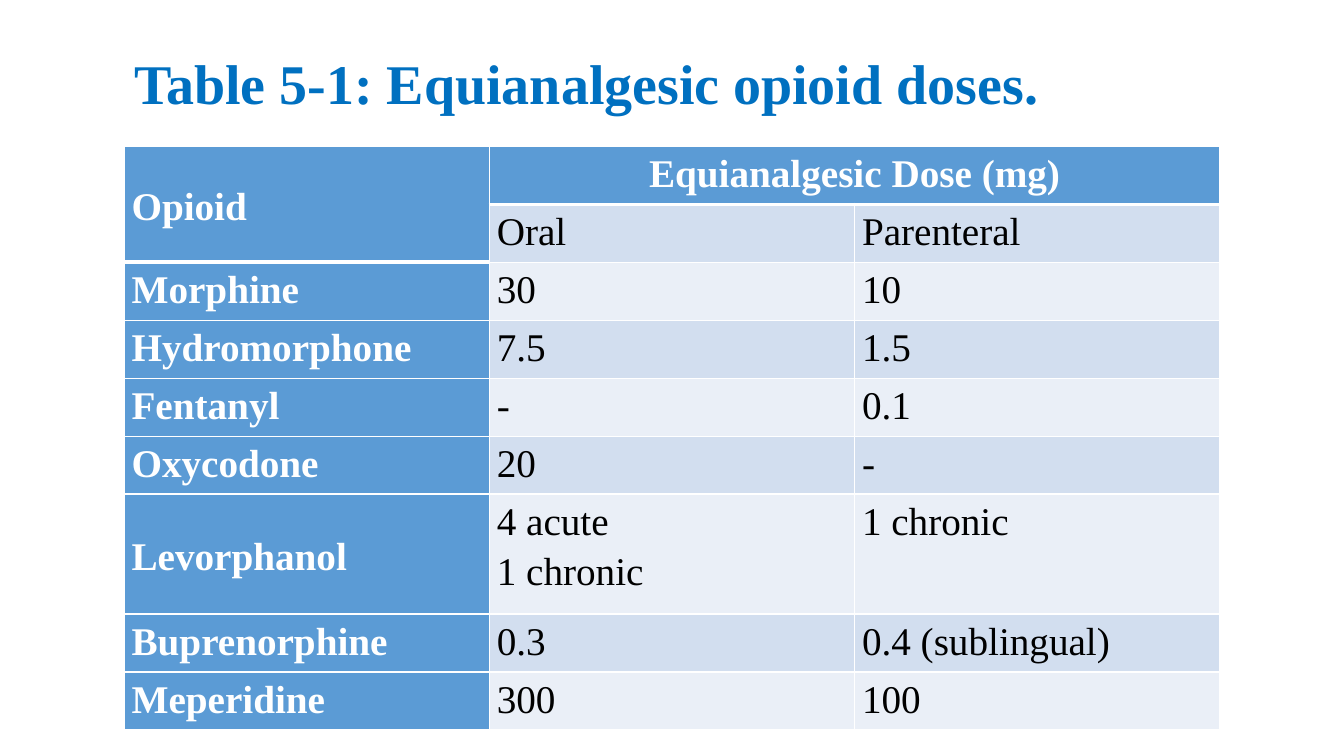
from pptx import Presentation
from pptx.dml.color import RGBColor
from pptx.enum.text import MSO_ANCHOR as Anchor, PP_ALIGN as Align
from pptx.oxml import parse_xml
from pptx.oxml.ns import nsdecls
from pptx.util import Pt

FONT = "Times New Roman"
WHITE, BLACK, TITLE_BLUE = "FFFFFF", "000000", "0070C0"
HEADER_FILL, BANDS = "5B9BD5", ("EAEFF7", "D2DEEF")
ROW_H, TALL_ROW_H, COL_W = 41.4, 85.7, 260.9
TALL_ROW = 6
DOSES = [
    ("Opioid", "Equianalgesic Dose (mg)", ""),
    ("", "Oral", "Parenteral"),
    ("Morphine", "30", "10"),
    ("Hydromorphone", "7.5", "1.5"),
    ("Fentanyl", "-", "0.1"),
    ("Oxycodone", "20", "-"),
    ("Levorphanol", "4 acute\n1 chronic", "1 chronic"),
    ("Buprenorphine", "0.3", "0.4 (sublingual)"),
    ("Meperidine", "300", "100"),
]


def rgb(color):
    return RGBColor.from_string(color)


def format_text(tf, size, color, bold, align):
    for p in tf.paragraphs:
        p.alignment = align
        p.line_spacing = 1.15
        p.space_before = Pt(0)
        p.font.name = FONT
        p.font.size = Pt(size)
        p.font.bold = bold
        p.font.color.rgb = rgb(color)


def add_title(s, text):
    title = s.shapes.title
    title.left, title.top, title.width, title.height = map(Pt, (88.6, 15.1, 805.7, 80.6))
    tf = title.text_frame
    tf.text = text
    tf.word_wrap = True
    tf.vertical_anchor = Anchor.MIDDLE
    format_text(tf, 40, TITLE_BLUE, True, Align.LEFT)


def set_borders(cell, **widths):
    """Draw white cell edges; call before the fill, which must follow them."""
    tc_pr = cell._tc.get_or_add_tcPr()
    for side in "LRTB":
        tc_pr.append(parse_xml(
            f'<a:ln{side} {nsdecls("a")} w="{Pt(widths.get(side, 1))}"><a:solidFill>'
            f'<a:srgbClr val="{WHITE}"/></a:solidFill></a:ln{side}>'))


def format_cell(cell, row, col, text):
    is_header = row == 0 or col == 0
    header_end = 2 if col == 0 else 1
    last_row = 1 if cell.is_merge_origin and col == 0 else row
    set_borders(cell, T=3 if row == header_end else 1,
                B=3 if last_row + 1 == header_end else 1)
    cell.fill.solid()
    cell.fill.fore_color.rgb = rgb(HEADER_FILL if is_header else BANDS[row % 2])
    cell.margin_left = cell.margin_right = Pt(5.4)
    cell.margin_top = cell.margin_bottom = 0
    centred = col == 0 and row in (0, TALL_ROW)
    cell.vertical_anchor = Anchor.MIDDLE if centred else Anchor.TOP
    if cell.is_spanned:
        return
    cell.text_frame.text = text
    if row == 0 and col == 1:
        align = Align.CENTER
    else:
        align = Align.LEFT if row == 1 else Align.JUSTIFY
    format_text(cell.text_frame, 28, WHITE if is_header else BLACK, is_header, align)


def add_dose_table(s):
    heights = [TALL_ROW_H if i == TALL_ROW else ROW_H for i in range(len(DOSES))]
    frame = s.shapes.add_table(len(DOSES), 3, Pt(88.6), Pt(104.6),
                               Pt(3 * COL_W), Pt(sum(heights)))
    table = frame.table
    table.first_col = True
    for column in table.columns:
        column.width = Pt(COL_W)
    for table_row, height in zip(table.rows, heights):
        table_row.height = Pt(height)
    table.cell(0, 0).merge(table.cell(1, 0))
    table.cell(0, 1).merge(table.cell(0, 2))
    for row, texts in enumerate(DOSES):
        for col, text in enumerate(texts):
            format_cell(table.cell(row, col), row, col, text)


def main():
    prs = Presentation()
    prs.slide_width, prs.slide_height = Pt(960), Pt(540)
    s = prs.slides.add_slide(prs.slide_layouts[5])
    add_title(s, "Table 5-1: Equianalgesic opioid doses.")
    add_dose_table(s)
    prs.save("out.pptx")


if __name__ == "__main__":
    main()
